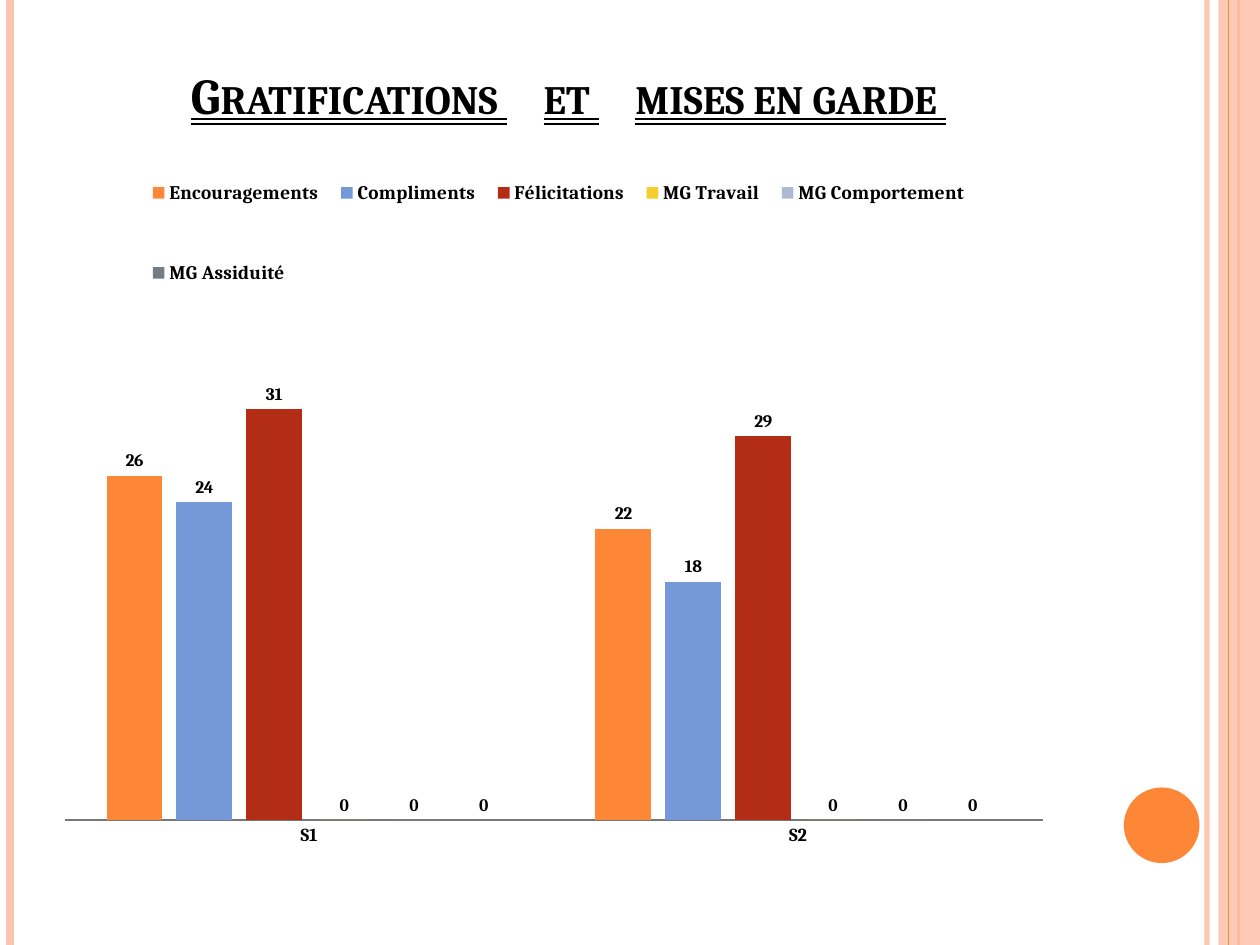
"""Build the slide of awards and warnings per semester."""
from lxml.etree import SubElement
from pptx import Presentation
from pptx.chart.data import CategoryChartData as Data
from pptx.dml.color import RGBColor as Rgb
from pptx.enum.chart import XL_CHART_TYPE as Kind
from pptx.enum.chart import XL_LABEL_POSITION as Spot
from pptx.enum.chart import XL_LEGEND_POSITION as Side
from pptx.enum.chart import XL_TICK_LABEL_POSITION as Place
from pptx.enum.chart import XL_TICK_MARK as Tick
from pptx.enum.shapes import MSO_CONNECTOR as Link
from pptx.enum.shapes import MSO_SHAPE as Form
from pptx.enum.text import MSO_ANCHOR as Anchor
from pptx.enum.text import MSO_AUTO_SIZE as Fit
from pptx.enum.text import MSO_UNDERLINE as Under
from pptx.enum.text import PP_ALIGN as Align
from pptx.oxml import parse_xml
from pptx.oxml.ns import nsdecls, qn
from pptx.util import Inches, Pt

FACE = "Cambria"
PINK, ORANGE, BLACK = "FEC3AE", "FE8637", "000000"
RULES = [(9.58, PINK, 3, 93), (0.08, PINK, 4.5, 100), (9.83, ORANGE, 1.5, 100)]
WORDS = ["Gratifications", " ", "et", " ", "mises en garde", " "]
TERMS = ["S1", "S2"]
SERIES = [
    ("Encouragements", [26, 22], ORANGE),
    ("Compliments", [24, 18], "7598D9"),
    ("Félicitations", [31, 29], "B32C16"),
    ("MG Travail", [0, 0], "F5CD2D"),
    ("MG Comportement", [0, 0], "AEBAD5"),
    ("MG Assiduité", [0, 0], "777C84"),
]


def paint(form, tint, alpha=100):
    """Set a solid colour, with its opacity in percent."""
    form.solid()
    form.fore_color.rgb = Rgb.from_string(tint)
    if alpha < 100:
        node = form._xPr.find(qn("a:solidFill"))[0]
        SubElement(node, qn("a:alpha"), val=str(alpha * 1000))


def style(font, size, bold=True):
    """Set the face, size, weight and black colour of a font."""
    font.name, font.size, font.bold = FACE, Pt(size), bold
    paint(font.fill, BLACK)


def add_rule(slide, left, tint, width, alpha):
    """Draw a vertical line over the full height."""
    x = Inches(left)
    rule = slide.shapes.add_connector(Link.STRAIGHT, x, 0, x, Inches(7.5))
    rule.line.width = Pt(width)
    paint(rule.line.fill, tint, alpha)
    SubElement(rule._element.spPr, qn("a:effectLst"))


def add_form(slide, form, box, tint, alpha=100):
    """Draw a filled shape without outline."""
    shape = slide.shapes.add_shape(form, *map(Inches, box))
    shape.shadow.inherit = False
    shape.line.fill.background()
    paint(shape.fill, tint, alpha)


def set_title(slide):
    """Place the title and fill it run by run, with wide word gaps."""
    title = slide.shapes.title
    title.left, title.top, title.width, title.height = map(
        Inches, (0.5, 0.3, 8.17, 1.25))
    frame = title.text_frame
    frame.word_wrap, frame.auto_size = True, Fit.NONE
    frame.vertical_anchor = Anchor.BOTTOM
    frame.margin_bottom = Inches(0.56)
    para = frame.paragraphs[0]
    para.alignment = Align.CENTER
    for word in WORDS:
        run = para.add_run()
        run.text = word
        style(run.font, 28.8)
        run.font.underline = Under.DOUBLE_LINE
        props = run.font._element
        props.set("cap", "small")
        if word == " ":
            props.set("spc", "1050")


def set_layout(node, index, box, target=""):
    """Give a chart part a fixed place, in fractions of the chart."""
    for old in node.findall(qn("c:layout")):
        node.remove(old)
    inner = f'<c:layoutTarget val="{target}"/>' if target else ""
    inner += '<c:xMode val="edge"/><c:yMode val="edge"/>'
    inner += "".join(f'<c:{k} val="{v}"/>' for k, v in zip("xywh", box))
    node.insert(index, parse_xml(
        f'<c:layout {nsdecls("c")}><c:manualLayout>{inner}'
        "</c:manualLayout></c:layout>"))


def set_axes(chart):
    """Show the category axis alone."""
    axis = chart.category_axis
    axis.major_tick_mark = axis.minor_tick_mark = Tick.NONE
    axis.tick_label_position = Place.NEXT_TO_AXIS
    axis.format.line.width = Pt(1)
    paint(axis.format.line.fill, "777777")
    style(axis.tick_labels.font, 10.5)
    scale = chart.value_axis
    scale.minimum_scale, scale.maximum_scale = 0, 35
    scale.has_major_gridlines = scale.visible = False


def set_legend(chart):
    """Place the legend over the bars."""
    chart.has_legend = True
    legend = chart.legend
    legend.position, legend.include_in_layout = Side.TOP, False
    style(legend.font, 11)
    set_layout(legend._element, 1, (0.09, 0.01, 0.82, 0.28))


def add_bars(slide):
    """Add the clustered columns with their values."""
    data = Data()
    data.categories = TERMS
    for name, vals, _ in SERIES:
        data.add_series(name, vals)
    box = map(Inches, (0.35, 0.93, 8.17, 6.13))
    chart = slide.shapes.add_chart(Kind.COLUMN_CLUSTERED, *box, data).chart
    chart.has_title = False
    style(chart.font, 10, False)
    plot = chart.plots[0]
    plot.gap_width, plot.overlap, plot.vary_by_categories = 150, -25, False
    for bars, (_, _, tint) in zip(plot.series, SERIES):
        paint(bars.format.fill, tint)
        labels = bars.data_labels
        labels.show_value, labels.position = True, Spot.OUTSIDE_END
        style(labels.font, 10)
    set_axes(chart)
    set_legend(chart)
    area = chart._chartSpace.chart.plotArea
    set_layout(area, 0, (0.02, 0.31, 0.95, 0.6), "inner")


def main():
    """Build and save the slide."""
    deck = Presentation()
    deck.slide_width, deck.slide_height = Inches(10), Inches(7.5)
    slide = deck.slides.add_slide(deck.slide_layouts[5])
    for rule in RULES:
        add_rule(slide, *rule)
    add_form(slide, Form.RECTANGLE, (9.67, 0, 0.33, 7.5), PINK, 87)
    add_rule(slide, 9.75, ORANGE, 0.75, 100)
    add_form(slide, Form.OVAL, (8.92, 6.25, 0.6, 0.6), ORANGE)
    set_title(slide)
    add_bars(slide)
    deck.save("out.pptx")


if __name__ == "__main__":
    main()
